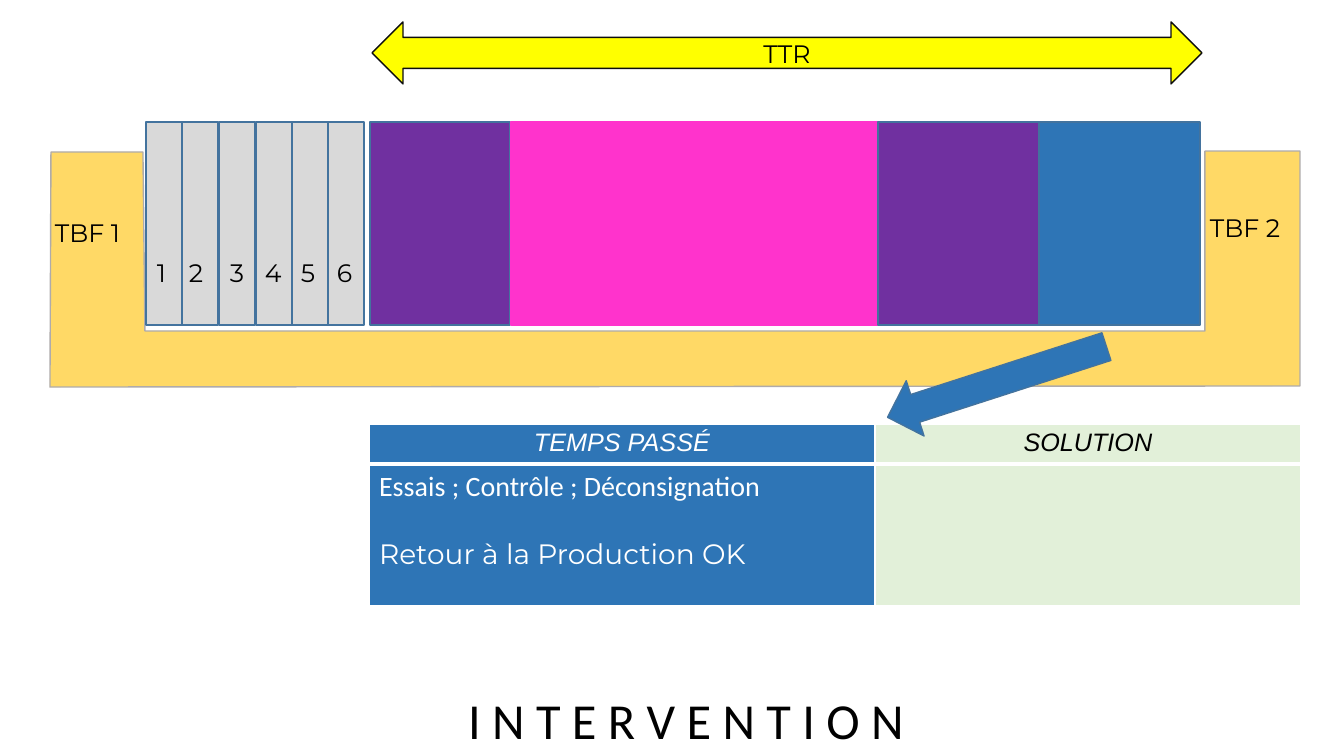
from lxml import etree
from pptx import Presentation
from pptx.dml.color import RGBColor
from pptx.enum.shapes import MSO_SHAPE
from pptx.enum.text import MSO_ANCHOR, MSO_AUTO_SIZE, PP_ALIGN
from pptx.oxml.ns import qn
from pptx.util import Pt

RECT, DOWN, BOTH = MSO_SHAPE.RECTANGLE, MSO_SHAPE.DOWN_ARROW, MSO_SHAPE.LEFT_RIGHT_ARROW
LEFT, MID = PP_ALIGN.LEFT, PP_ALIGN.CENTER

# Content, lengths in px
WIDE, HIGH = 1344, 756
UNIT = 12192000 / WIDE
COLOR = {
    "black": "000000", "white": "FFFFFF", "gold": "FFD966", "rim": "AFABAB",
    "gray": "D9D9D9", "edge": "43739E", "plum": "7030A0", "pink": "FF33CC",
    "blue": "2E75B6", "yellow": "FFFF00", "ink": "0D0D0D", "mint": "E2F0D9",
}
TITLE = "I N T E R V E N T I O N"
BAND = [(51, 152), (143, 152), (145, 331), (1205, 331),
        (1205, 151), (1300, 151), (1300, 386), (50, 387)]
TOP, TALL = 122, 203
STRIP_X, STRIP_W, PITCH = 146, 36, 36.5
STEPS = [("1", 1), ("2", -3), ("3", 1), ("4", -1), ("5", -1), ("6", -1)]  # label, shift
BLOCKS = [  # left, width, fill, line
    (370, 140, "plum", "edge"), (511, 369, "pink", "pink"),
    (878, 161, "plum", "edge"), (1039, 161, "blue", "edge"),
]
TBF = [("TBF 1", 45, 212), ("TBF 2", 1200, 207)]
COLS, ROWS = [(506, "blue", "white"), (426, "mint", "black")], [40, 141]
HEADS = ["TEMPS PASSÉ", "SOLUTION"]
SPENT = [("Essais ; Contrôle ; Déconsignation", "Calibri", 0),
         ("Retour à la Production OK", "Montserrat", 24)]  # text, font, space before


def px(*vals):
    return [round(v * UNIT) for v in vals]


def rgb(name):
    return RGBColor.from_string(COLOR[name])


def write(para, text, font="Montserrat", size=18, color="black",
          align=LEFT, italic=False, before=0):
    para.alignment = align
    para.space_before = Pt(before)
    run = para.add_run()
    run.text = text
    run.font.name, run.font.size, run.font.italic = font, Pt(size), italic
    run.font.color.rgb = rgb(color)


def paint(shape, fill, line):
    shape.shadow.inherit = False
    shape.fill.solid()
    shape.fill.fore_color.rgb = rgb(fill)
    shape.line.color.rgb = rgb(line)
    shape.line.width = Pt(1)
    return shape


def draw(kind, box, fill, line):
    return paint(slide.shapes.add_shape(kind, *px(*box)), fill, line)


def label(text, x, y, w, h):
    frame = slide.shapes.add_textbox(*px(x, y, w, h)).text_frame
    frame.word_wrap = False
    write(frame.paragraphs[0], text)


def border(cell, low):
    props = cell._tc.get_or_add_tcPr()
    for i, (side, width) in enumerate([("L", 1), ("R", 1), ("T", 1), ("B", low)]):
        line = etree.Element(qn("a:ln" + side), w=str(Pt(width)))
        solid = etree.SubElement(line, qn("a:solidFill"))
        etree.SubElement(solid, qn("a:srgbClr"), val=COLOR["white"])
        props.insert(i, line)


deck = Presentation()
deck.slide_width, deck.slide_height = px(WIDE, HIGH)
slide = deck.slides.add_slide(deck.slide_layouts[5])

# Title at the foot
title = slide.shapes.title
title.left, title.top, title.width, title.height = px(458, 684, 461, 72)
frame = title.text_frame
frame.word_wrap, frame.auto_size = False, MSO_AUTO_SIZE.NONE
frame.vertical_anchor = MSO_ANCHOR.TOP
write(frame.paragraphs[0], TITLE, font="Calibri", size=36)

# Gold band
path = slide.shapes.build_freeform(*BAND[0], scale=UNIT)
path.add_line_segments(BAND[1:], close=True)
paint(path.convert_to_shape(), "gold", "rim")

# Numbered strips
for i, (text, shift) in enumerate(STEPS):
    x = round(STRIP_X + i * PITCH)
    draw(RECT, (x, TOP, STRIP_W, TALL), "gray", "edge")
    label(text, x + shift, 252, 37, 40)

# Repair blocks
for x, wide, fill, line in BLOCKS:
    draw(RECT, (x, TOP, wide, TALL), fill, line)

# TTR span and TBF labels
span = draw(BOTH, (372, 22, 830, 62), "yellow", "ink").text_frame
span.vertical_anchor = MSO_ANCHOR.MIDDLE
write(span.paragraphs[0], "TTR", align=MID)
for text, x, y in TBF:
    label(text, x, y, 101, 40)

# Table
table = slide.shapes.add_table(2, 2, *px(369, 424, 932, sum(ROWS))).table
for r, high in enumerate(ROWS):
    table.rows[r].height = px(high)[0]
    for c, (wide, fill, color) in enumerate(COLS):
        table.columns[c].width = px(wide)[0]
        cell = table.cell(r, c)
        cell.fill.solid()
        cell.fill.fore_color.rgb = rgb(fill)
        border(cell, 1 if r else 3)
        if r == 0:
            write(cell.text_frame.paragraphs[0], HEADS[c], font="Arial",
                  color=color, align=MID, italic=True)
body = table.cell(1, 0).text_frame
for i, (text, font, before) in enumerate(SPENT):
    para = body.add_paragraph() if i else body.paragraphs[0]
    write(para, text, font=font, size=20, color="white", before=before)

# Arrow from the last block to the table
draw(DOWN, (968, 267, 58, 230), "blue", "edge").rotation = 72.1

deck.save("out.pptx")
